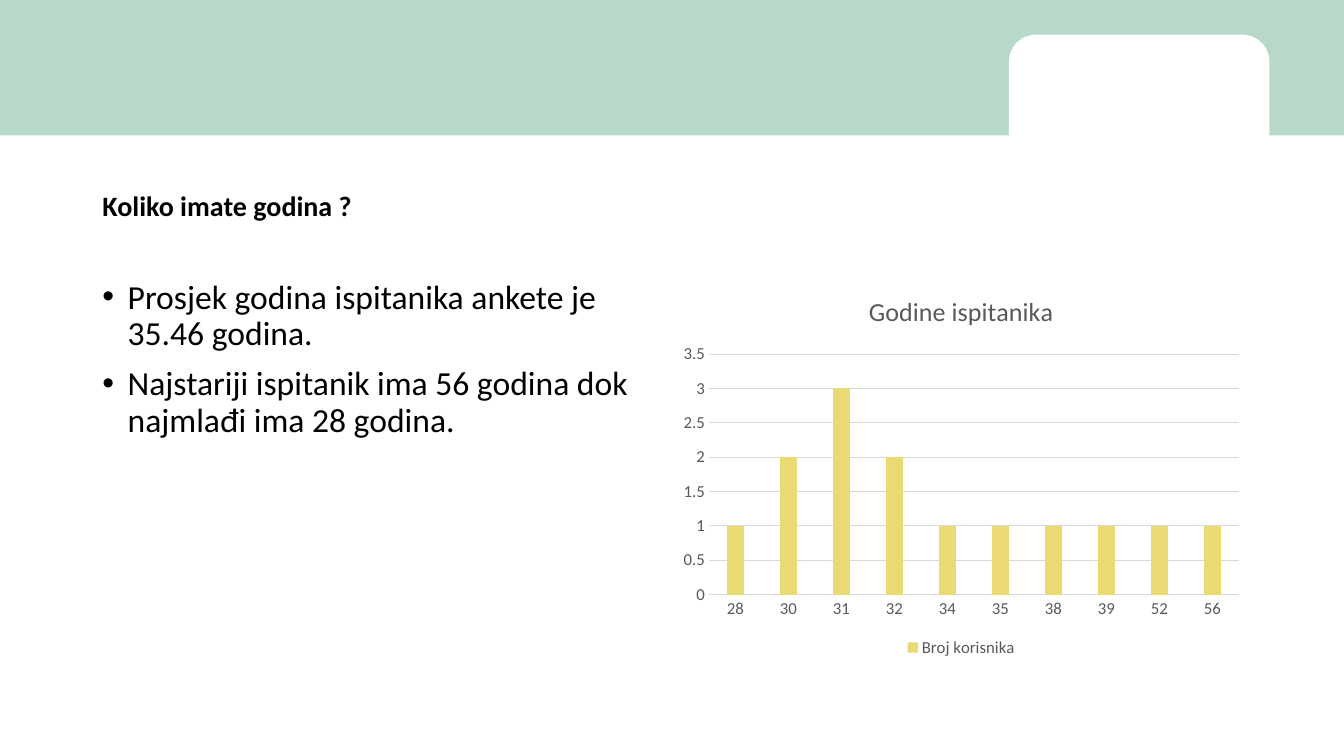
import dataclasses

import lxml.etree
import pptx
import pptx.chart.data
import pptx.dml.color
import pptx.enum.chart
import pptx.enum.shapes
import pptx.enum.text
import pptx.oxml.ns
import pptx.util

EMU_PER_PX = 9525


def px(*lengths):
    return [pptx.util.Emu(length * EMU_PER_PX) for length in lengths]


@dataclasses.dataclass(frozen=True)
class Theme:
    font: str = "Calibri"
    ink: str = "000000"
    paper: str = "FFFFFF"
    mint: str = "B8D8C9"
    yellow: str = "E9DA73"
    label: str = "595959"
    rule: str = "D9D9D9"
    heading_size: float = 20
    body_size: float = 24
    chart_title_size: float = 18.6
    chart_size: float = 12
    rule_width: float = 0.75


class SlideBuilder:
    def __init__(self, slide, theme):
        self.slide = slide
        self.theme = theme

    def color(self, code):
        return pptx.dml.color.RGBColor.from_string(code)

    def style(self, font, size, color, bold=False):
        font.name = self.theme.font
        font.size = pptx.util.Pt(size)
        font.color.rgb = self.color(color)
        font.bold = bold

    def shape(self, kind, box, color):
        panel = self.slide.shapes.add_shape(kind, *px(*box))
        panel.shadow.inherit = False
        panel.fill.solid()
        panel.fill.fore_color.rgb = self.color(color)
        panel.line.fill.background()

    def place(self, placeholder, box):
        placeholder.left, placeholder.top, placeholder.width, placeholder.height = px(*box)
        self.slide.shapes.element.append(placeholder.element)
        frame = placeholder.text_frame
        frame.word_wrap = True
        frame.auto_size = pptx.enum.text.MSO_AUTO_SIZE.NONE
        frame.vertical_anchor = pptx.enum.text.MSO_ANCHOR.TOP
        return frame

    def heading(self, text, box):
        paragraph = self.place(self.slide.shapes.title, box).paragraphs[0]
        paragraph.alignment = pptx.enum.text.PP_ALIGN.LEFT
        run = paragraph.add_run()
        run.text = text
        self.style(run.font, self.theme.heading_size, self.theme.ink, bold=True)

    def bullets(self, findings, box, indent):
        frame = self.place(self.slide.placeholders[1], box)
        for position, finding in enumerate(findings):
            paragraph = frame.add_paragraph() if position else frame.paragraphs[0]
            paragraph.line_spacing = 0.9
            paragraph.space_before = pptx.util.Pt(10)
            properties = paragraph._p.get_or_add_pPr()
            margin = px(indent)[0]
            properties.set("marL", str(margin))
            properties.set("indent", str(-margin))
            for tag, key, value in (("a:buFont", "typeface", "Arial"), ("a:buChar", "char", "•")):
                lxml.etree.SubElement(properties, pptx.oxml.ns.qn(tag)).set(key, value)
            run = paragraph.add_run()
            run.text = finding
            self.style(run.font, self.theme.body_size, self.theme.ink)

    def rule(self, line):
        line.color.rgb = self.color(self.theme.rule)
        line.width = pptx.util.Pt(self.theme.rule_width)

    def column_chart(self, title, series_name, counts, box):
        theme = self.theme
        data = pptx.chart.data.CategoryChartData()
        data.categories = list(counts)
        data.add_series(series_name, list(counts.values()))
        chart = self.slide.shapes.add_chart(
            pptx.enum.chart.XL_CHART_TYPE.COLUMN_CLUSTERED, *px(*box), data
        ).chart
        self.style(chart.font, theme.chart_size, theme.label)

        chart.has_title = True
        run = chart.chart_title.text_frame.paragraphs[0].add_run()
        run.text = title
        self.style(run.font, theme.chart_title_size, theme.label)
        chart.chart_title.include_in_layout = False

        chart.has_legend = True
        chart.legend.position = pptx.enum.chart.XL_LEGEND_POSITION.BOTTOM
        chart.legend.include_in_layout = False
        self.style(chart.legend.font, theme.chart_size, theme.label)

        for axis in (chart.category_axis, chart.value_axis):
            axis.major_tick_mark = pptx.enum.chart.XL_TICK_MARK.NONE
            axis.minor_tick_mark = pptx.enum.chart.XL_TICK_MARK.NONE
            self.style(axis.tick_labels.font, theme.chart_size, theme.label)
        self.rule(chart.category_axis.format.line)
        chart.value_axis.format.line.fill.background()
        chart.value_axis.has_major_gridlines = True
        self.rule(chart.value_axis.major_gridlines.format.line)

        columns = chart.plots[0]
        columns.vary_by_categories = False
        columns.gap_width = 219
        columns.overlap = -27
        fill = columns.series[0].format.fill
        fill.solid()
        fill.fore_color.rgb = self.color(theme.yellow)


def main():
    deck = pptx.Presentation()
    deck.slide_width, deck.slide_height = px(1280, 720)
    theme = Theme()
    builder = SlideBuilder(deck.slides.add_slide(deck.slide_layouts[1]), theme)

    shapes = pptx.enum.shapes.MSO_SHAPE
    builder.shape(shapes.RECTANGLE, (0, 0, 1287, 129), theme.mint)
    builder.shape(shapes.ROUNDED_RECTANGLE, (961, 33, 248, 154), theme.paper)
    builder.bullets(
        [
            "Prosjek godina ispitanika ankete je 35.46 godina.",
            "Najstariji ispitanik ima 56 godina dok najmlađi ima 28 godina.",
        ],
        (88, 262, 525, 386),
        indent=24,
    )
    builder.heading("Koliko imate godina ?", (88, 175, 1104, 42))
    respondents_by_age = {
        "28": 1, "30": 2, "31": 3, "32": 2, "34": 1,
        "35": 1, "38": 1, "39": 1, "52": 1, "56": 1,
    }
    builder.column_chart(
        "Godine ispitanika", "Broj korisnika", respondents_by_age, (640, 262, 551, 368)
    )
    deck.save("out.pptx")


if __name__ == "__main__":
    main()
